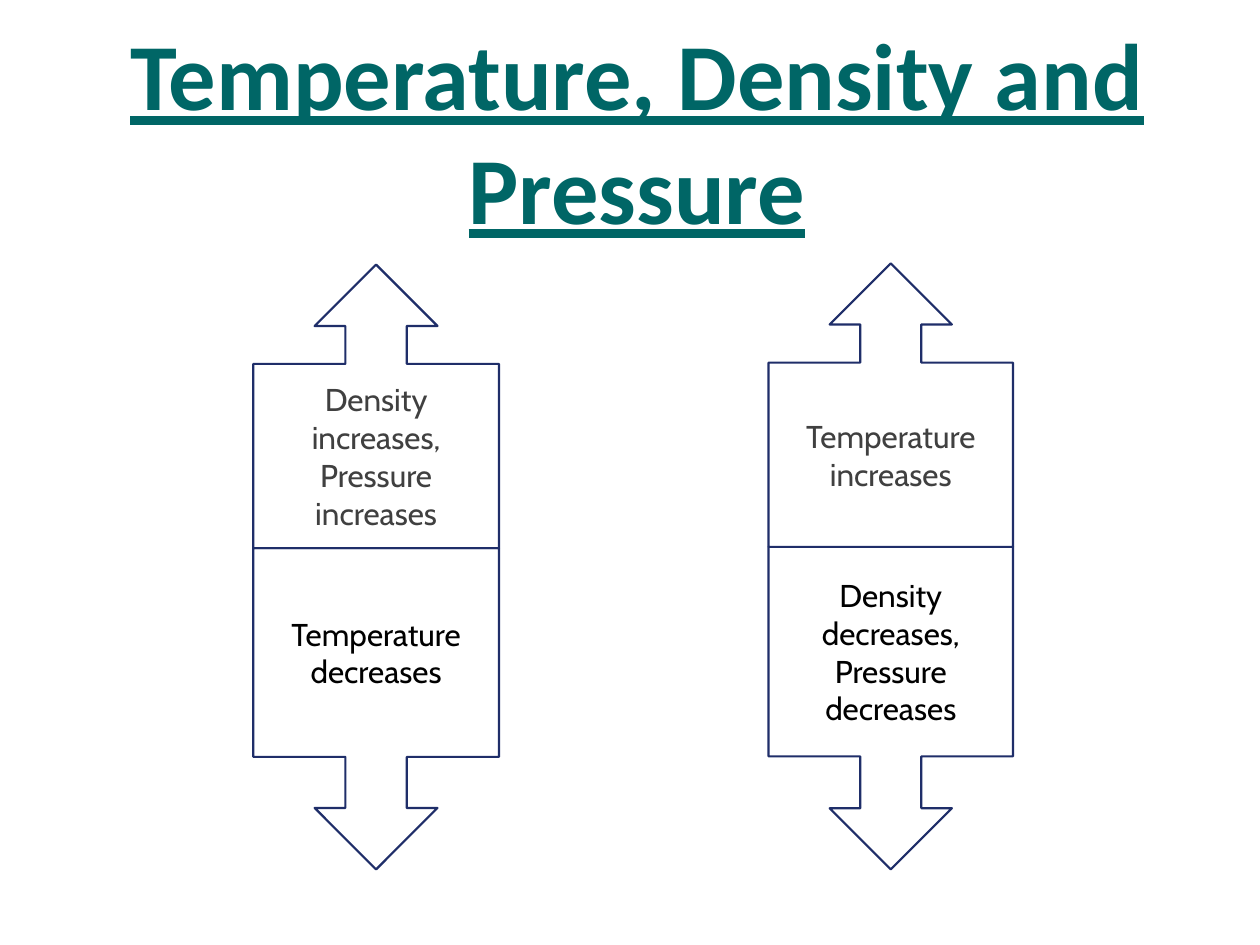
from pptx import Presentation
from pptx.dml.color import RGBColor
from pptx.enum.shapes import MSO_SHAPE
from pptx.enum.text import MSO_ANCHOR, PP_ALIGN
from pptx.util import Inches, Pt

COLORS = {
    "title": "006666",
    "outline": "1F2E69",
    "fill": "FFFFFF",
    "rising": "404040",
    "falling": "000000",
}


def color(name):
    return RGBColor.from_string(COLORS[name])


def add_run(paragraph, text, font_name, size, color_name):
    run = paragraph.add_run()
    run.text = text
    run.font.name = font_name
    run.font.size = Pt(size)
    run.font.color.rgb = color(color_name)
    return run


def add_title(slide, text):
    box = slide.shapes.add_textbox(Inches(0.08), Inches(0.08), Inches(9.75), Inches(1.75))
    frame = box.text_frame
    frame.word_wrap = True
    frame.vertical_anchor = MSO_ANCHOR.TOP
    heading = frame.paragraphs[0]
    heading.alignment = PP_ALIGN.CENTER
    heading._p.get_or_add_pPr().set("marL", str(Inches(0.2)))
    run = add_run(heading, text, "Calibri", 54, "title")
    run.font.bold = True
    run.font.underline = True


def add_callout(slide, preset, left, top, width, height, paragraphs, text_color):
    """Arrow callout; each paragraph is a list of lines."""
    callout = slide.shapes.add_shape(
        preset, Inches(left), Inches(top), Inches(width), Inches(height))
    callout.shadow.inherit = False
    callout.fill.solid()
    callout.fill.fore_color.rgb = color("fill")
    callout.line.color.rgb = color("outline")
    callout.line.width = Pt(1.25)

    frame = callout.text_frame
    frame.word_wrap = True
    frame.vertical_anchor = MSO_ANCHOR.MIDDLE
    for i, lines in enumerate(paragraphs):
        paragraph = frame.add_paragraph() if i else frame.paragraphs[0]
        paragraph.alignment = PP_ALIGN.CENTER
        for j, line in enumerate(lines):
            if j:
                paragraph.add_line_break()
            add_run(paragraph, line, "Cabin", 18, text_color)


def add_arrow_pair(slide, left, middle, width, rising, falling):
    """Upward and downward callouts meeting at the middle height."""
    up_height, bottom = 2.25, 6.9
    add_callout(slide, MSO_SHAPE.DOWN_ARROW_CALLOUT, left, middle, width,
                bottom - middle, falling, "falling")
    add_callout(slide, MSO_SHAPE.UP_ARROW_CALLOUT, left, middle - up_height, width,
                up_height, rising, "rising")


def main():
    prs = Presentation()
    prs.slide_width, prs.slide_height = Inches(10), Inches(7.5)
    slide = prs.slides.add_slide(prs.slide_layouts[6])

    # Heading
    add_title(slide, "Temperature, Density and Pressure")

    # Density and pressure rise as temperature falls
    add_arrow_pair(slide, 2.01, 4.35, 1.95,
                   rising=[["Density", "increases,"], ["Pressure increases"]],
                   falling=[["Temperature decreases"]])

    # Temperature rises as density and pressure fall
    add_arrow_pair(slide, 6.1, 4.34, 1.94,
                   rising=[["Temperature", "increases"]],
                   falling=[["Density decreases,"], ["Pressure decreases"]])

    prs.save("out.pptx")


if __name__ == "__main__":
    main()
